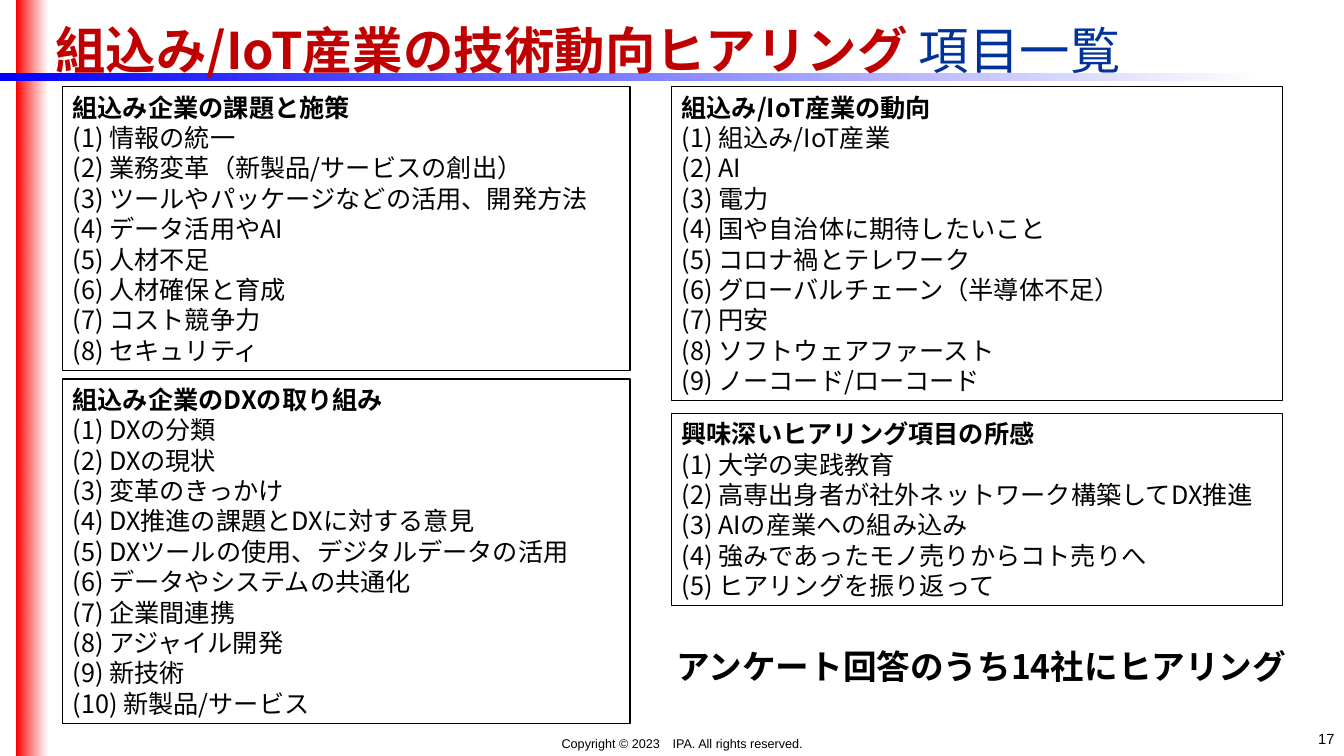
"""Build the hearing topic overview slide."""
import pptx
import pptx.dml.color
import pptx.enum.text
import pptx.enum.shapes
import pptx.oxml.ns
import pptx.util

COLOURS = {
    "black": "000000", "white": "FFFFFF", "red": "FF0000",
    "blue": "0000FF", "crimson": "C00000", "navy": "003399",
}
JAPANESE = "Noto Sans CJK JP"
ALIGN = pptx.enum.text.PP_ALIGN
ANCHOR = pptx.enum.text.MSO_ANCHOR
LIST_PITCH = 4.02

TOPIC_LISTS = [
    (4.65, 11.47, 42.23, "組込み企業の課題と施策", [
        "情報の統一", "業務変革（新製品/サービスの創出）",
        "ツールやパッケージなどの活用、開発方法", "データ活用やAI",
        "人材不足", "人材確保と育成", "コスト競争力", "セキュリティ"]),
    (4.65, 50.13, 42.23, "組込み企業のDXの取り組み", [
        "DXの分類", "DXの現状", "変革のきっかけ", "DX推進の課題とDXに対する意見",
        "DXツールの使用、デジタルデータの活用", "データやシステムの共通化",
        "企業間連携", "アジャイル開発", "新技術", "新製品/サービス"]),
    (49.96, 11.47, 45.46, "組込み/IoT産業の動向", [
        "組込み/IoT産業", "AI", "電力", "国や自治体に期待したいこと",
        "コロナ禍とテレワーク", "グローバルチェーン（半導体不足）", "円安",
        "ソフトウェアファースト", "ノーコード/ローコード"]),
    (49.96, 54.67, 45.46, "興味深いヒアリング項目の所感", [
        "大学の実践教育", "高専出身者が社外ネットワーク構築してDX推進",
        "AIの産業への組み込み", "強みであったモノ売りからコト売りへ",
        "ヒアリングを振り返って"]),
]


def colour(name):
    return pptx.dml.color.RGBColor.from_string(COLOURS[name])


def style_with(target, formats):
    for attribute, value in formats.items():
        setattr(target, attribute, value)


class TopicSlide:
    def __init__(self, deck):
        self.width, self.height = deck.slide_width, deck.slide_height
        self.slide = deck.slides.add_slide(deck.slide_layouts[4])
        self.shapes = self.slide.shapes

    def area(self, left, top, width, height):
        return (round(self.width * left / 100), round(self.height * top / 100),
                round(self.width * width / 100), round(self.height * height / 100))

    def place(self, holder, area):
        style_with(holder, dict(zip(("left", "top", "width", "height"), self.area(*area))))

    def frame(self, owner, anchor=ANCHOR.TOP, inset=0.05):
        style_with(owner.text_frame, {
            "word_wrap": True, "auto_size": pptx.enum.text.MSO_AUTO_SIZE.NONE,
            "vertical_anchor": anchor,
            "margin_left": pptx.util.Inches(0.1), "margin_right": pptx.util.Inches(0.05),
            "margin_top": pptx.util.Inches(inset), "margin_bottom": pptx.util.Inches(inset)})
        return owner.text_frame

    def compose(self, paragraph, runs, size, font=JAPANESE, align=ALIGN.LEFT, spacing=None):
        properties = paragraph._p.get_or_add_pPr()
        for key in ("marL", "indent"):
            properties.set(key, "0")
        properties.append(properties.makeelement(pptx.oxml.ns.qn("a:buNone"), {}))
        style_with(paragraph, {"alignment": align, "space_before": pptx.util.Pt(0),
                               "space_after": pptx.util.Pt(0), "line_spacing": spacing})
        for words, tint, bold in runs:
            run = paragraph.add_run()
            run.text = words
            style_with(run.font, {"name": font, "size": pptx.util.Pt(size), "bold": bold})
            run.font.color.rgb = colour(tint)
            letters = run._r.get_or_add_rPr()
            letters.append(letters.makeelement(pptx.oxml.ns.qn("a:ea"), {"typeface": font}))

    def band(self, area, start, opacity):
        band = self.shapes.add_shape(pptx.enum.shapes.MSO_SHAPE.RECTANGLE, *self.area(*area))
        band.shadow.inherit = False
        band.line.fill.background()
        band.fill.gradient()
        band.fill.gradient_angle = 0
        for stop, tint in zip(band.fill.gradient_stops, (start, "white")):
            stop.color.rgb = colour(tint)
        fade = band._element.spPr.findall(".//" + pptx.oxml.ns.qn("a:srgbClr"))[-1]
        fade.append(fade.makeelement(pptx.oxml.ns.qn("a:alpha"), {"val": str(opacity * 1000)}))
        self.shapes._spTree.insert(2, band._element)

    def title(self, area, runs):
        heading = self.shapes.title
        self.place(heading, area)
        self.compose(self.frame(heading, ANCHOR.MIDDLE, 0).paragraphs[0], runs, 36)

    def topics(self, holder, left, top, width, heading, items):
        self.place(holder, (left, top, width, LIST_PITCH * (len(items) + 1) + 1.33))
        holder.line.color.rgb = colour("black")
        holder.line.width = pptx.util.Pt(0.75)
        body = self.frame(holder)
        pitch = pptx.util.Pt(21.7)
        self.compose(body.paragraphs[0], [(heading, "black", True)], 18, spacing=pitch)
        for number, item in enumerate(items, 1):
            self.compose(body.add_paragraph(), [(f"({number}) {item}", "black", False)],
                         18, spacing=pitch)

    def note(self, area, words, size, bold=False, **style):
        note = self.shapes.add_textbox(*self.area(*area))
        self.compose(self.frame(note).paragraphs[0], [(words, "black", bold)], size, **style)
        return note


def main():
    deck = pptx.Presentation()
    deck.slide_width, deck.slide_height = pptx.util.Inches(13.33), pptx.util.Inches(7.5)
    page = TopicSlide(deck)
    page.band((0, 9.6, 94.15, 1.07), "blue", 100)
    page.band((1.2, 0, 2.33, 100), "red", 84)
    page.title((3.38, 2.27, 83.87, 8.4), [
        ("組込み/IoT産業の技術動向ヒアリング ", "crimson", True),
        ("項目一覧", "navy", False)])
    holders = list(page.slide.placeholders)[1:]
    for holder, topics in zip(holders, TOPIC_LISTS):
        page.topics(holder, *topics)
    summary = page.note((49.59, 85.6, 50.19, 6), "アンケート回答のうち14社にヒアリング", 24,
                        bold=True, spacing=pptx.util.Pt(24))
    summary.fill.solid()
    summary.fill.fore_color.rgb = colour("white")
    page.note((20.26, 96.67, 60.62, 3.33), "Copyright © 2023　IPA. All rights reserved.", 9,
              font="Arial", align=ALIGN.CENTER)
    page.note((76.67, 95.87, 23, 4.13), "17", 10.5, font="Arial", align=ALIGN.RIGHT)
    deck.save("out.pptx")


if __name__ == "__main__":
    main()
